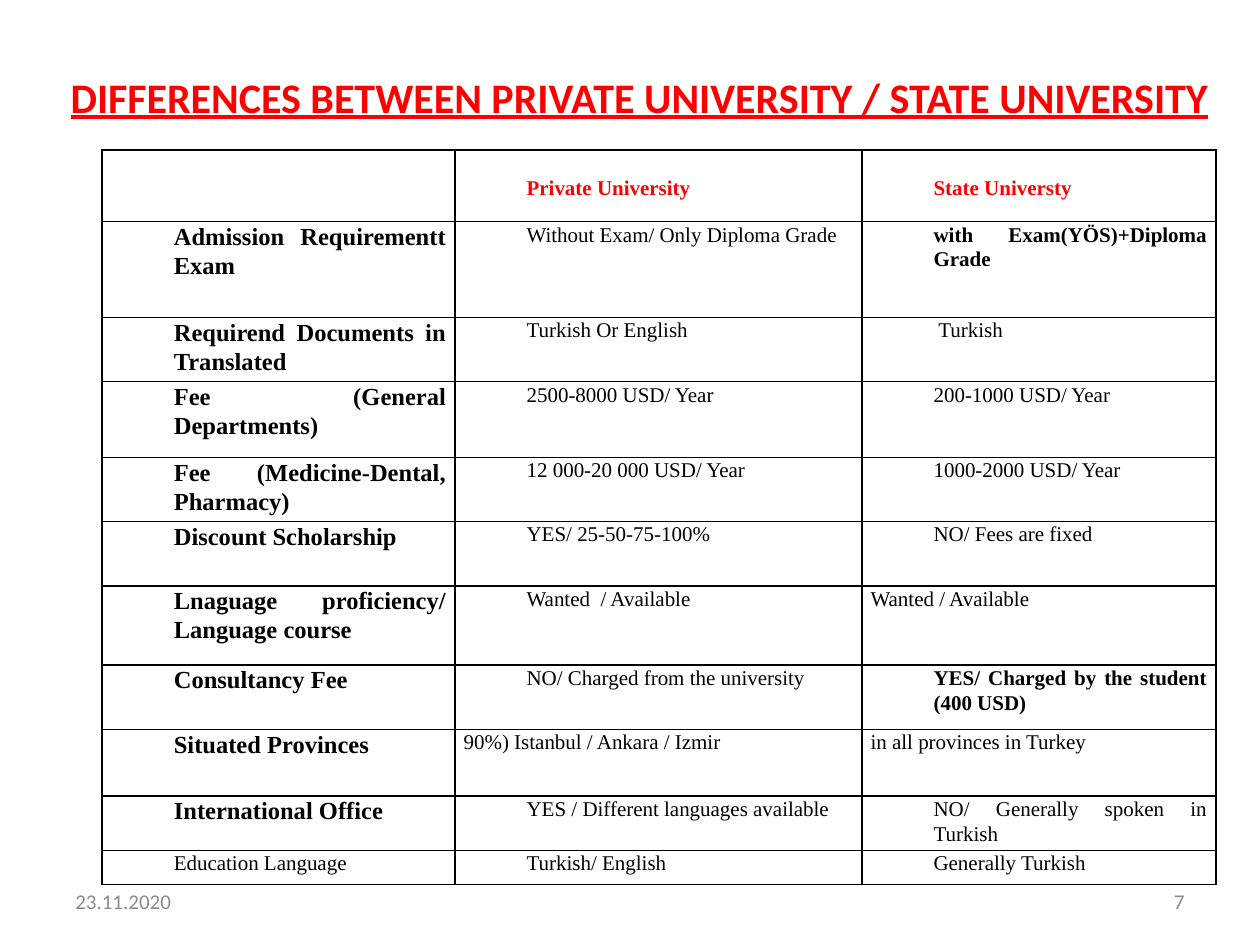
from lxml import etree
from pptx import Presentation
from pptx.dml.color import RGBColor
from pptx.enum.text import MSO_ANCHOR, PP_ALIGN
from pptx.oxml.ns import qn
from pptx.util import Inches, Pt

LEFT, CENTER, RIGHT = PP_ALIGN.LEFT, PP_ALIGN.CENTER, PP_ALIGN.RIGHT
JUSTIFY, MIDDLE = PP_ALIGN.JUSTIFY, MSO_ANCHOR.MIDDLE
COLORS = {"red": "FF0000", "black": "000000", "gray": "8C8C8C"}
SANS, SERIF = "Calibri", "Times New Roman"

TITLE = {"name": SANS, "size": Pt(24), "bold": True, "underline": True}
FOOTER = {"name": SANS, "size": Pt(12)}
BODY = {"name": SERIF, "size": Pt(12), "bold": False}
STRONG = {**BODY, "bold": True}
LABEL = {**STRONG, "size": Pt(14)}

COLUMN_WIDTHS = [2.8, 3.23, 2.81]
ROW_HEIGHTS = [0.57, 0.76, 0.51, 0.6, 0.51, 0.51, 0.63, 0.51, 0.53, 0.43, 0.27]
ROWS = [
    ("", "Private University", "State Universty"),
    ("Admission Requirementt Exam", "Without Exam/ Only Diploma Grade",
     "with Exam(YÖS)+Diploma Grade"),
    ("Requirend Documents in Translated", "Turkish Or English", " Turkish"),
    ("Fee (General Departments)", "2500-8000 USD/ Year", "200-1000 USD/ Year"),
    ("Fee (Medicine-Dental, Pharmacy)", "12 000-20 000 USD/ Year", "1000-2000 USD/ Year"),
    ("Discount Scholarship", "YES/ 25-50-75-100%", "NO/ Fees are fixed"),
    ("Lnaguage proficiency/ Language course", "Wanted  / Available", "Wanted / Available"),
    ("Consultancy Fee", "NO/ Charged from the university",
     "YES/ Charged by the student (400 USD)"),
    ("Situated Provinces", "90%) Istanbul / Ankara / Izmir", "in all provinces in Turkey"),
    ("International Office", "YES / Different languages available",
     "NO/ Generally spoken in Turkish"),
    ("Education Language", "Turkish/ English", "Generally Turkish"),
]
STRONG_CELLS = {(1, 2), (7, 2)}
FLUSH_CELLS = {(6, 2), (8, 1), (8, 2)}


def write(para, text, style, color, align):
    """Put one formatted run into a paragraph."""
    para.alignment = align
    span = para.add_run()
    span.text = text
    for name, value in style.items():
        setattr(span.font, name, value)
    span.font.color.rgb = RGBColor.from_string(COLORS[color])


def add_text(page, place, text, style, color, align):
    """Add a wrapped, vertically centred text box."""
    box = page.shapes.add_textbox(*map(Inches, place))
    box.text_frame.word_wrap = True
    box.text_frame.vertical_anchor = MIDDLE
    write(box.text_frame.paragraphs[0], text, style, color, align)


def set_borders(cell):
    """Draw a thin black line on all four sides of a cell."""
    properties = cell._tc.get_or_add_tcPr()
    for index, side in enumerate(("lnL", "lnR", "lnT", "lnB")):
        line = etree.Element(qn(f"a:{side}"), w=str(Pt(1)))
        fill = etree.SubElement(line, qn("a:solidFill"))
        etree.SubElement(fill, qn("a:srgbClr"), val=COLORS["black"])
        properties.insert(index, line)


def cell_style(row, column):
    """Choose the font format for a table position."""
    last_row = len(ROWS) - 1
    if column == 0 and row < last_row:
        return LABEL
    return STRONG if row == 0 or (row, column) in STRONG_CELLS else BODY


def fill_cell(cell, row, column, text):
    """Format one table cell and write its text."""
    cell.fill.background()
    set_borders(cell)
    margins = {"margin_left": 0.07, "margin_right": 0.07,
               "margin_top": 0.2 if row == 0 else 0, "margin_bottom": 0}
    for name, value in margins.items():
        setattr(cell, name, Inches(value))
    if not text:
        return
    para = cell.text_frame.paragraphs[0]
    para.line_spacing = 1.07
    if (row, column) not in FLUSH_CELLS:
        para._p.get_or_add_pPr().set("marL", str(Inches(0.5)))
    color = "red" if row == 0 else "black"
    write(para, text, cell_style(row, column), color, JUSTIFY)


def add_comparison(page, left, top):
    """Add the table comparing the two kinds of university."""
    size = (sum(COLUMN_WIDTHS), sum(ROW_HEIGHTS))
    frame = page.shapes.add_table(len(ROWS), len(COLUMN_WIDTHS),
                                  *map(Inches, (left, top, *size)))
    table = frame.table
    table.first_row = table.horz_banding = False
    for column, width in zip(table.columns, COLUMN_WIDTHS):
        column.width = Inches(width)
    for row, height in zip(table.rows, ROW_HEIGHTS):
        row.height = Inches(height)
    for row, texts in enumerate(ROWS):
        for column, text in enumerate(texts):
            fill_cell(table.cell(row, column), row, column, text)


def main():
    """Build the slide and save the deck."""
    deck = Presentation()
    deck.slide_width, deck.slide_height = Inches(10), Inches(7.5)
    page = deck.slides.add_slide(deck.slide_layouts[6])
    add_text(page, (0.35, 0.3, 9.45, 0.93),
             "DIFFERENCES BETWEEN PRIVATE UNIVERSITY / STATE UNIVERSITY",
             TITLE, "red", CENTER)
    add_comparison(page, 0.81, 1.19)
    add_text(page, (0.5, 6.95, 2.33, 0.4), "23.11.2020", FOOTER, "gray", LEFT)
    add_text(page, (7.17, 6.95, 2.33, 0.4), "7", FOOTER, "gray", RIGHT)
    deck.save("out.pptx")


if __name__ == "__main__":
    main()
